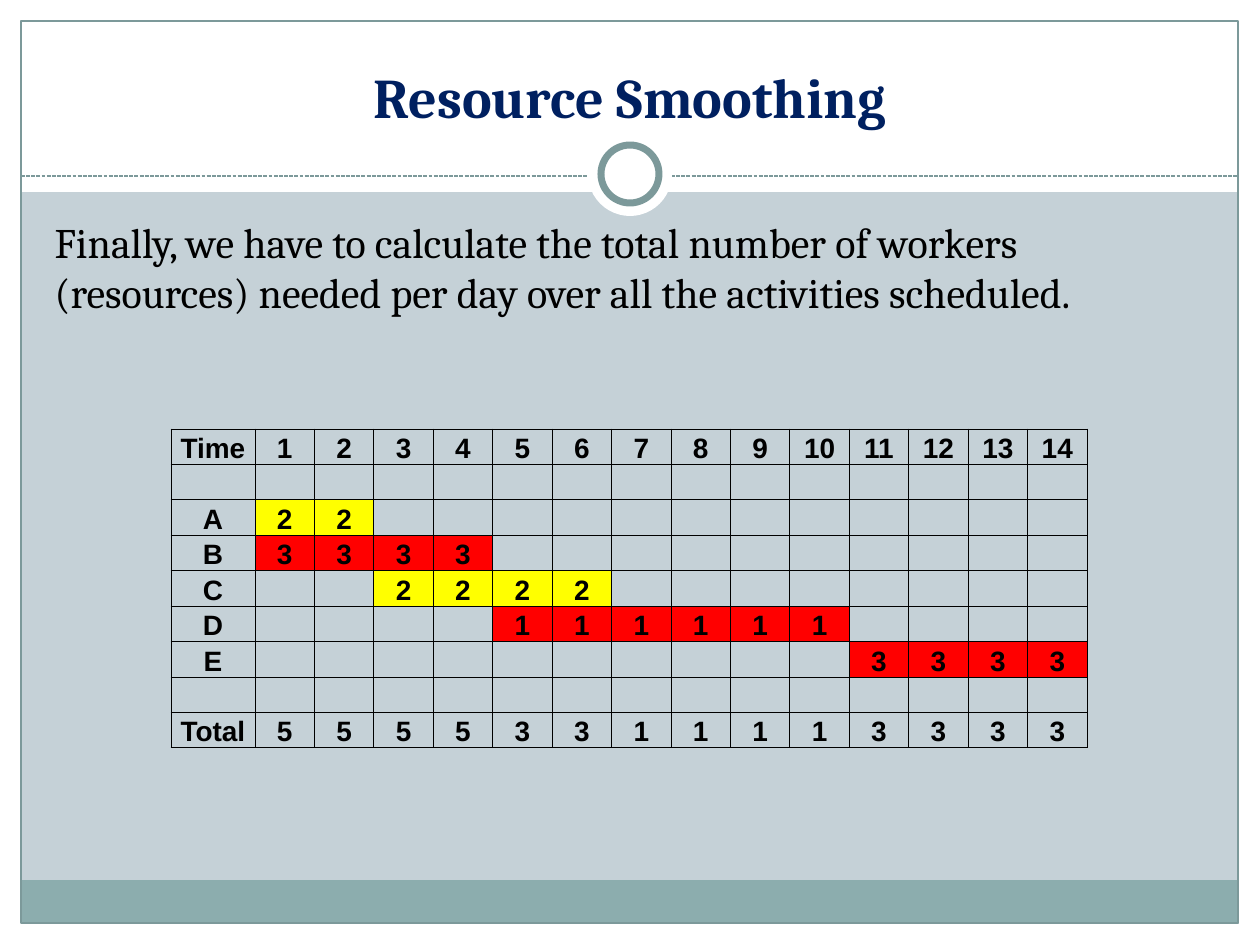
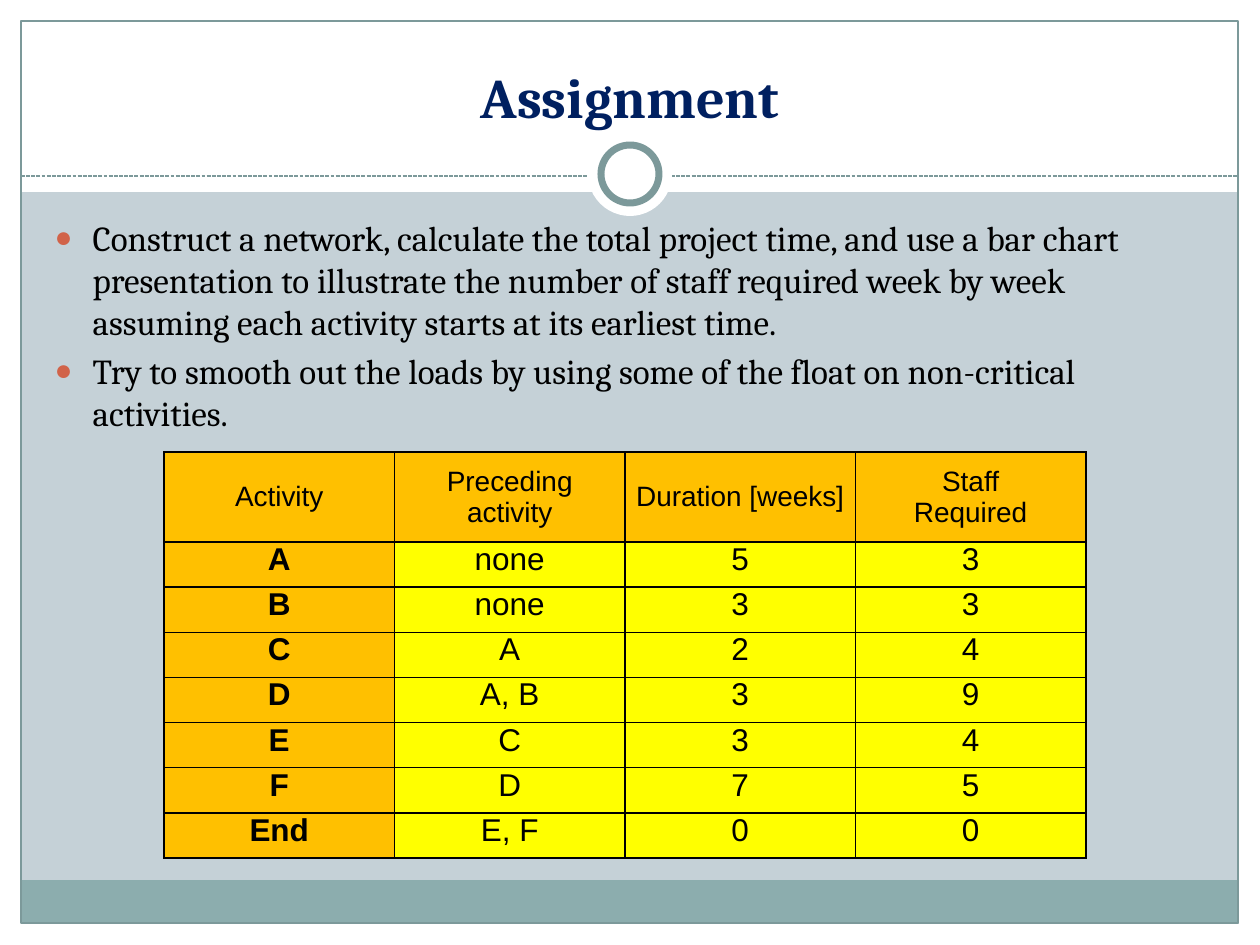
from dataclasses import dataclass
from lxml.etree import SubElement
from pptx import Presentation
from pptx.dml.color import RGBColor as Rgb
from pptx.enum.dml import MSO_LINE as Dash
from pptx.enum.shapes import MSO_CONNECTOR as Link, MSO_SHAPE as Kind
from pptx.enum.text import MSO_ANCHOR as Anchor, MSO_AUTO_SIZE as Fit, PP_ALIGN as Align
from pptx.oxml.ns import qn
from pptx.util import Pt

SCALE = 914400 / 126
PLAIN = "{2D5ABB26-0587-4C30-8999-92F81FD0307C}"  # no style, no grid


def px(n):
    return round(n * SCALE)


@dataclass(frozen=True)
class Theme:
    back: str = "C5D1D7"
    white: str = "FFFFFF"
    band: str = "8CADAE"
    edge: str = "7C999A"
    navy: str = "002060"
    black: str = "000000"
    dot: str = "D16349"
    yellow: str = "FFFF00"
    red: str = "FF0000"
    gold: str = "FFC000"
    serif: str = "Cambria"
    sans: str = "Arial"
    head: int = 32
    lead: int = 24
    item: int = 20
    cell: int = 18
    small: int = 16
    blank: int = 10


class Deck:
    def __init__(self, theme):
        self.theme = theme
        self.prs = Presentation()
        self.prs.slide_width, self.prs.slide_height = px(1260), px(945)
        self.layout = self.prs.slide_layouts[1]
        self.slide = None
        fill = self.prs.slide_master.background.fill
        fill.solid()
        fill.fore_color.rgb = Rgb.from_string(theme.back)

    def page(self, title):
        self.slide = self.prs.slides.add_slide(self.layout)
        t = self.theme
        frame = self.place(self.slide.shapes.title, (42, 32, 1176, 104))
        frame.vertical_anchor = Anchor.BOTTOM
        para = frame.paragraphs[0]
        para.alignment = Align.CENTER
        self.run(para, title, t.head, t.serif, t.navy, True)

    def place(self, shape, box):
        shape.left, shape.top, shape.width, shape.height = map(px, box)
        shape.text_frame.auto_size = Fit.NONE
        return shape.text_frame

    def run(self, para, text, size, face, color, bold=False):
        run = para.add_run()
        run.text = text
        font = run.font
        font.size, font.name, font.bold = Pt(size), face, bold
        font.color.rgb = Rgb.from_string(color)

    def body(self, items, size, height, dots=False):
        t = self.theme
        frame = self.place(self.slide.placeholders[1], (42, 210, 1179, height))
        for i, text in enumerate(items):
            para = frame.add_paragraph() if i else frame.paragraphs[0]
            self.bullet(para, dots)
            self.run(para, text, size, t.serif, t.black)

    def bullet(self, para, on):
        prop = para._p.get_or_add_pPr()
        gap = px(38) if on else 0
        prop.set("marL", str(gap))
        prop.set("indent", str(-gap))
        if not on:
            SubElement(prop, qn("a:buNone"))
            return
        color = SubElement(prop, qn("a:buClr"))
        SubElement(color, qn("a:srgbClr"), val=self.theme.dot)
        SubElement(prop, qn("a:buSzPct"), val="85000")
        SubElement(prop, qn("a:buFont"), typeface=self.theme.sans)
        SubElement(prop, qn("a:buChar"), char="●")

    def shape(self, kind, box, fill=None, line=None, width=0.75):
        shape = self.slide.shapes.add_shape(kind, *map(px, box))
        shape.shadow.inherit = False
        if fill:
            shape.fill.solid()
            shape.fill.fore_color.rgb = Rgb.from_string(fill)
        else:
            shape.fill.background()
        if line:
            shape.line.color.rgb = Rgb.from_string(line)
            shape.line.width = Pt(width)
        else:
            shape.line.fill.background()
        return shape

    def rule(self, x1, x2, y):
        line = self.slide.shapes.add_connector(Link.STRAIGHT, px(x1), px(y), px(x2), px(y))
        line.line.color.rgb = Rgb.from_string(self.theme.edge)
        line.line.width = Pt(0.75)
        line.line.dash_style = Dash.SQUARE_DOT
        SubElement(line._element.spPr, qn("a:effectLst"))
        return line

    def share(self, parts):
        """Move parts from the current slide to the layout, behind its placeholders."""
        tree = self.layout.shapes._spTree
        for i, part in enumerate(parts):
            part._element.xpath(".//p:cNvPr")[0].set("id", str(100 + i))
            tree.insert(2 + i, part._element)

    def table(self, left, top, cols, rows):
        box = px(left), px(top), px(sum(cols)), px(sum(rows))
        table = self.slide.shapes.add_table(len(rows), len(cols), *box).table
        table._tbl.tblPr.find(qn("a:tableStyleId")).text = PLAIN
        for col, width in zip(table.columns, cols):
            col.width = px(width)
        for row, height in zip(table.rows, rows):
            row.height = px(height)
        return table

    def cell(self, cell, text, size, fill=None, bold=False, anchor=Anchor.TOP,
             pad=(0, 0, 0, 0), sides="LRTB", width=1):
        t = self.theme
        cell.margin_left, cell.margin_top, cell.margin_right, cell.margin_bottom = map(px, pad)
        cell.vertical_anchor = anchor
        if fill:
            cell.fill.solid()
            cell.fill.fore_color.rgb = Rgb.from_string(fill)
        else:
            cell.fill.background()
        self.border(cell, sides, width)
        frame = cell.text_frame
        if not text:
            SubElement(frame.paragraphs[0]._p, qn("a:endParaRPr"), sz=str(t.blank * 100))
            return
        for i, part in enumerate(text.split("\n")):
            para = frame.add_paragraph() if i else frame.paragraphs[0]
            para.alignment = Align.CENTER
            self.run(para, part, size, t.sans, t.black, bold)

    def border(self, cell, sides, width):
        prop = cell._tc.get_or_add_tcPr()
        for i, side in enumerate(sides):
            line = SubElement(prop, qn(f"a:ln{side}"), w=str(Pt(width)))
            fill = SubElement(line, qn("a:solidFill"))
            SubElement(fill, qn("a:srgbClr"), val=self.theme.black)
            prop.insert(i, line)


def frame(deck):
    t = deck.theme
    # White margins and title area
    edges = [(0, 924, 1260, 21), (0, 0, 1260, 192), (0, 0, 21, 945), (1239, 0, 21, 945)]
    parts = [deck.shape(Kind.RECTANGLE, box, t.white) for box in edges]
    # Footer band, border, divider and ring
    parts += [
        deck.shape(Kind.RECTANGLE, (21, 880, 1217, 43), t.band),
        deck.shape(Kind.RECTANGLE, (21, 21, 1217, 902), line=t.edge),
        deck.rule(21, 1239, 176),
        deck.shape(Kind.OVAL, (588, 132, 84, 84), t.white),
        deck.shape(Kind.OVAL, (601, 145, 58, 58), t.white, t.edge, 4),
    ]
    deck.share(parts)


def smooth(deck):
    t = deck.theme
    days = range(1, 15)
    # Activity: first day, last day, workers, colour
    plan = {
        "A": (1, 2, 2, t.yellow),
        "B": (1, 4, 3, t.red),
        "C": (3, 6, 2, t.yellow),
        "D": (5, 10, 1, t.red),
        "E": (11, 14, 3, t.red),
    }
    blank = [""] * (len(days) + 1)
    work = [[name] + [str(n) if a <= day <= b else "" for day in days]
            for name, (a, b, n, _) in plan.items()]
    total = [sum(n for a, b, n, _ in plan.values() if a <= day <= b) for day in days]
    grid = [blank, ["Time", *map(str, days)], blank, *work, blank,
            ["Total", *map(str, total)], blank]
    # Open spacer rows close the grid above and below
    last = len(grid) - 1
    edges = {0: "B", last: "T"}
    table = deck.table(171, 403, [84] + [832 / 14] * 14, [26] + [319 / 9] * 9 + [26])
    for r, row in enumerate(grid):
        for c, text in enumerate(row):
            fill = plan[row[0]][3] if c and text and row[0] in plan else None
            deck.cell(table.cell(r, c), text, t.small, fill, True, Anchor.BOTTOM,
                      (1, 1, 1, 0), edges.get(r, "LRTB"), 0.5)


def staff(deck):
    t = deck.theme
    grid = [
        ("Activity", "Preceding activity", "Duration [weeks]", "Staff\nRequired"),
        ("A", "none", "5", "3"),
        ("B", "none", "3", "3"),
        ("C", "A", "2", "4"),
        ("D", "A, B", "3", "9"),
        ("E", "C", "3", "4"),
        ("F", "D", "7", "5"),
        ("End", "E, F", "0", "0"),
    ]
    table = deck.table(164, 452, [922 / 4] * 4, [90] + [316 / 7] * 7)
    for r, row in enumerate(grid):
        for c, text in enumerate(row):
            fill = t.yellow if r and c else t.gold
            size, anchor = (t.cell, Anchor.TOP) if r else (t.small, Anchor.MIDDLE)
            deck.cell(table.cell(r, c), text, size, fill, r > 0 and c == 0, anchor, (6, 0, 6, 0))


def main():
    deck = Deck(Theme())
    # Workers per day
    deck.page("Resource Smoothing")
    frame(deck)
    deck.body(["Finally, we have to calculate the total number of workers (resources) needed "
               "per day over all the activities scheduled."], deck.theme.lead, 292)
    smooth(deck)
    # Assignment
    deck.page("Assignment")
    deck.body(["Construct a network, calculate the total project time, and use a bar chart "
               "presentation to illustrate the number of staff required week by week assuming "
               "each activity starts at its earliest time.",
               "Try to smooth out the loads by using some of the float on non-critical "
               "activities."], deck.theme.item, 630, True)
    staff(deck)
    deck.prs.save("out.pptx")


if __name__ == "__main__":
    main()
